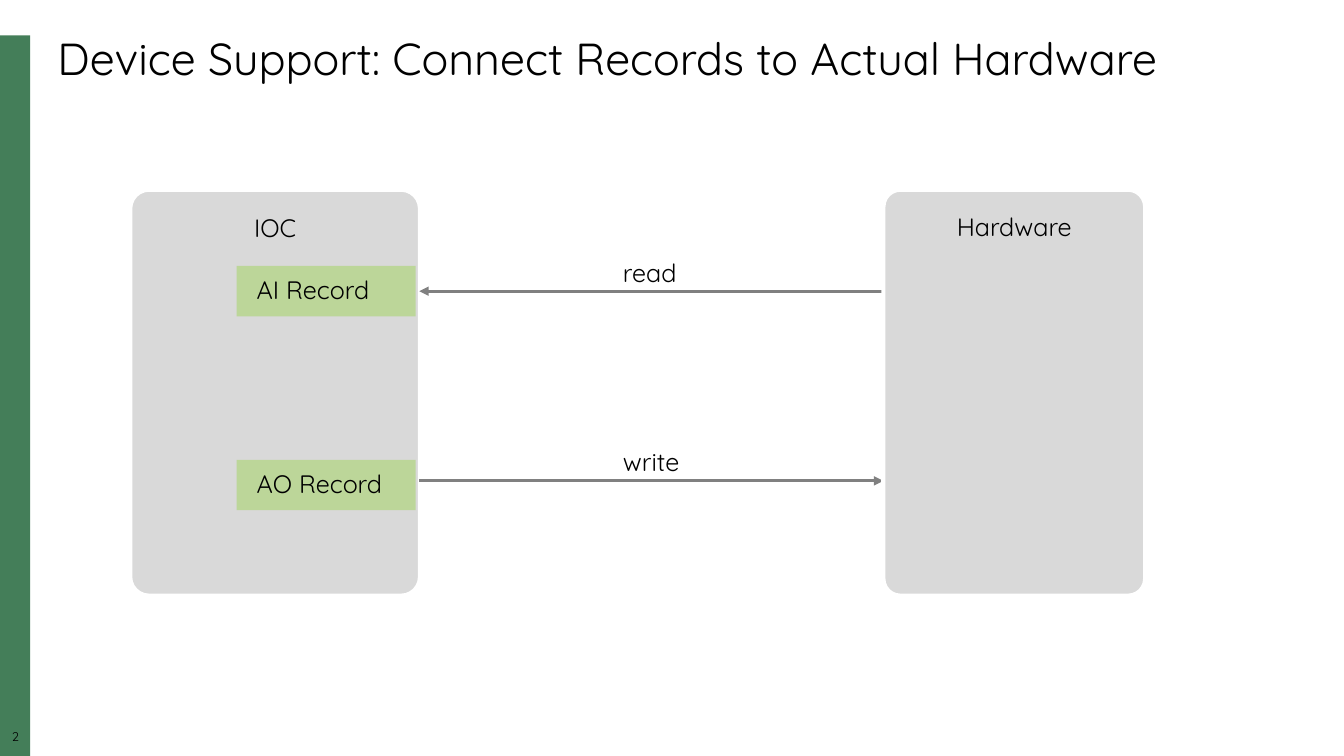
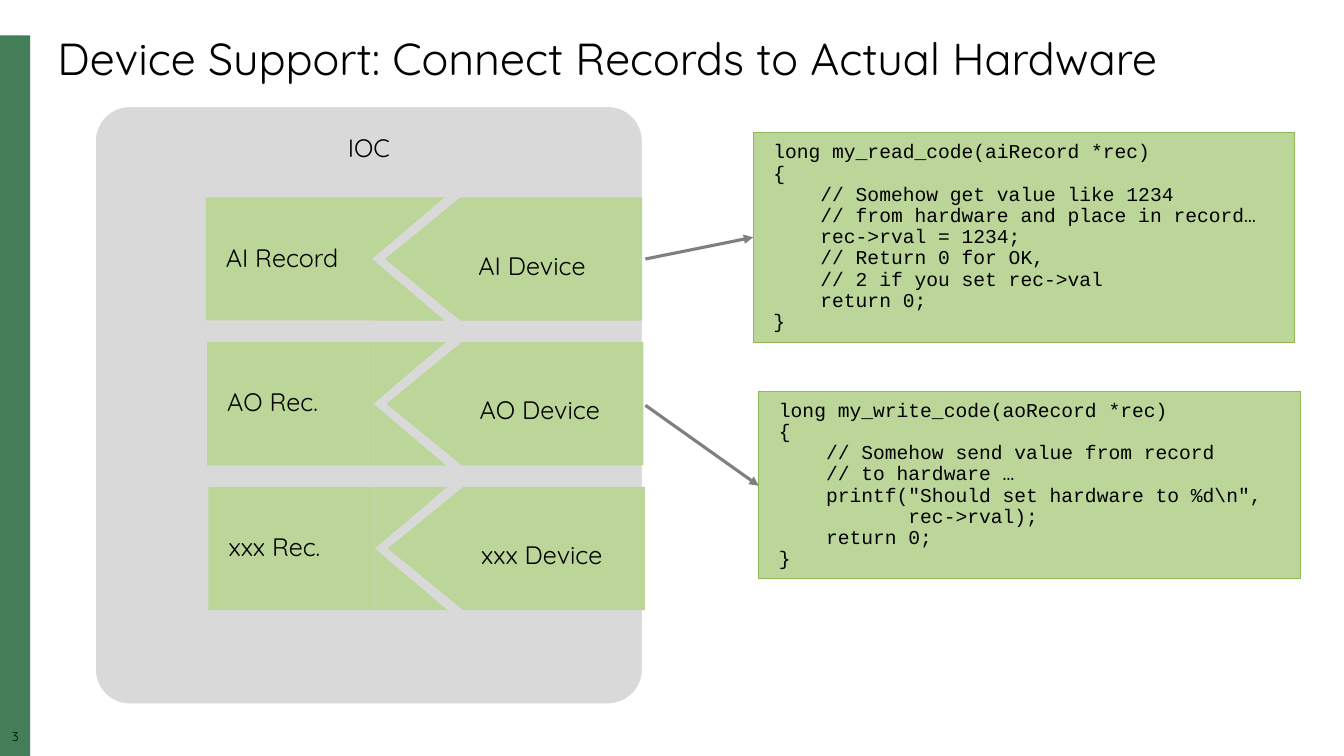
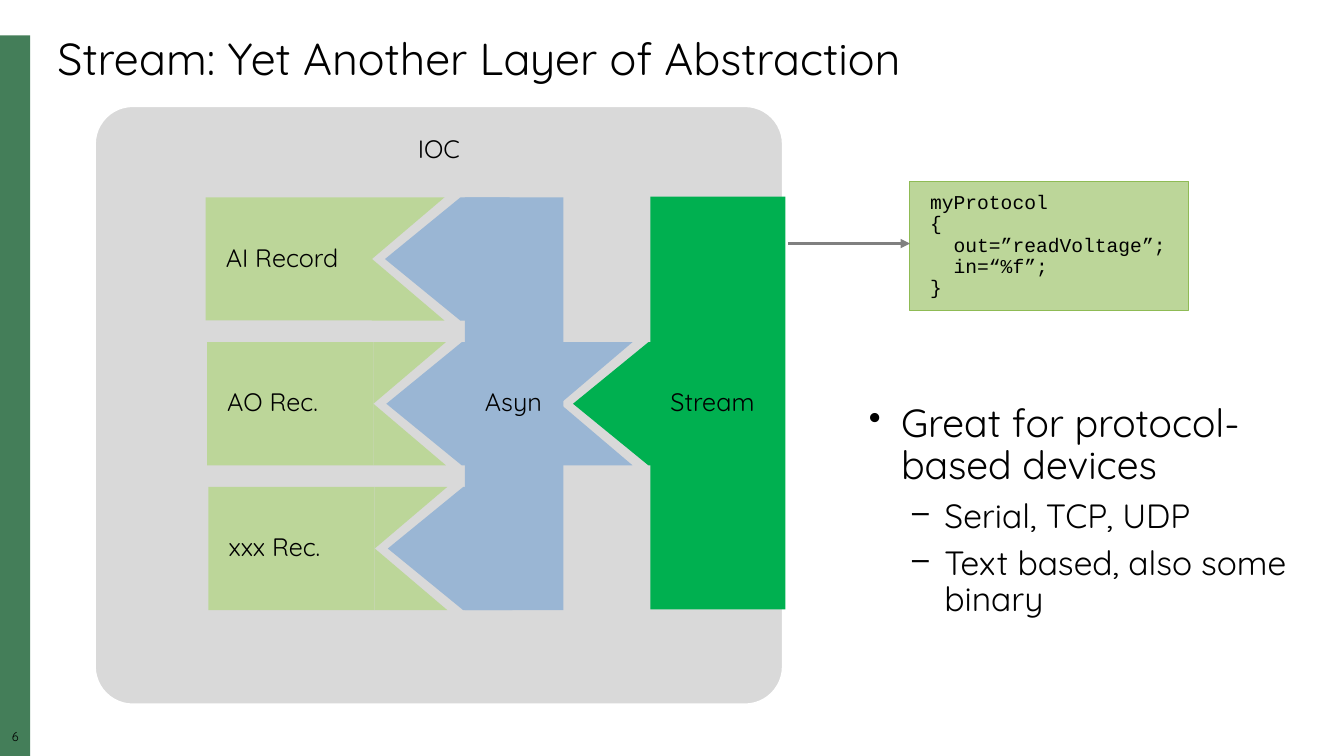
from lxml import etree
from pptx import Presentation
from pptx.dml.color import RGBColor
from pptx.enum.shapes import MSO_CONNECTOR, MSO_SHAPE
from pptx.enum.text import MSO_ANCHOR, PP_ALIGN
from pptx.oxml.ns import qn
from pptx.util import Pt

RECT = MSO_SHAPE.RECTANGLE
ROUND = MSO_SHAPE.ROUNDED_RECTANGLE
PLATE = MSO_SHAPE.PENTAGON
WEDGE = MSO_SHAPE.RIGHT_TRIANGLE
LINE = MSO_CONNECTOR.STRAIGHT
TOP, MIDDLE = MSO_ANCHOR.TOP, MSO_ANCHOR.MIDDLE
LEFT, CENTER = PP_ALIGN.LEFT, PP_ALIGN.CENTER

BLACK, WHITE = "000000", "FFFFFF"
BAND, PANEL, ARROW = "447E59", "D9D9D9", "808080"
LIME, EDGE, BLUE, GREEN = "BCD699", "8FBB55", "9AB6D4", "00B050"

BODY = {"name": "Quicksand", "size": Pt(18)}
HEAD = {**BODY, "size": Pt(32)}
SMALL = {**BODY, "size": Pt(9)}
CODE = {"name": "Courier New", "size": Pt(14)}
LEVELS = [
    {"mark": "•", "margin": 23, "size": 28},
    {"mark": "–", "margin": 54, "size": 24},
]

ROW_X, ROW_Y = 146.9, 141
STEP_X, STEP_Y = 1, 103.4
ROW_H, HALF = 88, 44
REC_W, NOTCH_W, GAP = 118.8, 51.8, 9.3
RECORDS = ["AI Record", "AO Rec.", "xxx Rec."]
DEVICES = ["AI Device", "AO Device", "xxx Device"]

READ = """long my_read_code(aiRecord *rec)
{
    // Somehow get value like 1234
    // from hardware and place in record…
    rec->rval = 1234;
    // Return 0 for OK,
    // 2 if you set rec->val
    return 0;
}"""
WRITE = r"""long my_write_code(aoRecord *rec)
{
    // Somehow send value from record
    // to hardware …
    printf("Should set hardware to %d\n",
           rec->rval);
    return 0;
}"""
STREAM = """myProtocol
{
  out=”readVoltage”;
  in=“%f”;
}"""


def color(code):
    return RGBColor.from_string(code)


def style(run, look):
    for key, value in look.items():
        setattr(run.font, key, value)
    run.font.color.rgb = color(BLACK)


def write(shape, text, look=BODY, align=LEFT, anchor=MIDDLE, inset=14.4):
    frame = shape.text_frame
    settings = {"word_wrap": True, "vertical_anchor": anchor}
    for side in ("left", "top", "right", "bottom"):
        settings["margin_" + side] = Pt(inset)
    for key, value in settings.items():
        setattr(frame, key, value)
    for i, line in enumerate(text.split("\n")):
        para = frame.paragraphs[0] if i == 0 else frame.add_paragraph()
        para.alignment, para.line_spacing = align, 0.9
        run = para.add_run()
        run.text = line
        style(run, look)


def label(slide, text, x, y, w, h, look=BODY, align=LEFT, inset=5):
    box = slide.shapes.add_textbox(Pt(x), Pt(y), Pt(w), Pt(h))
    write(box, text, look, align, TOP, inset)


def block(slide, kind, x, y, w, h, fill, edge=None, width=0.75):
    shape = slide.shapes.add_shape(kind, Pt(x), Pt(y), Pt(w), Pt(h))
    shape.shadow.inherit = False
    shape.fill.solid()
    shape.fill.fore_color.rgb = color(fill)
    if edge:
        shape.line.color.rgb = color(edge)
        shape.line.width = Pt(width)
    else:
        shape.line.fill.background()
    return shape


def panel(slide, text, x, y, w, h):
    shape = block(slide, ROUND, x, y, w, h, PANEL, WHITE, 3)
    shape.adjustments[0] = 0.065
    write(shape, text, align=CENTER, anchor=TOP)


def tile(slide, text, x, y, w, h, fill=LIME):
    write(block(slide, RECT, x, y, w, h, fill), text)


def code(slide, text, x, y, w, h):
    write(block(slide, RECT, x, y, w, h, LIME, EDGE), text, CODE)


def arrow(slide, x1, y1, x2, y2):
    line = slide.shapes.add_connector(LINE, Pt(x1), Pt(y1), Pt(x2), Pt(y2))
    line.line.color.rgb = color(ARROW)
    line.line.width = Pt(2.25)
    props = line.line._get_or_add_ln()
    etree.SubElement(props, qn("a:tailEnd"), type="triangle")
    etree.SubElement(line._element.spPr, qn("a:effectLst"))


def notch(slide, x, y, fill):
    block(slide, WEDGE, x, y + HALF, NOTCH_W, HALF, fill)
    shift = (NOTCH_W - HALF) / 2
    upper = block(slide, WEDGE, x + shift, y - shift, HALF, NOTCH_W, fill)
    upper.rotation = 90


def plate(slide, x, y, w, fill):
    shape = block(slide, PLATE, x, y, w, ROW_H, fill)
    shape.adjustments[0] = 0.612
    shape.rotation = 180


def rows(slide, width, fill, devices=()):
    for i, name in enumerate(RECORDS):
        x, y = ROW_X + i * STEP_X, ROW_Y + i * STEP_Y
        joint = x + REC_W
        plate(slide, joint + GAP, y, width, fill)
        notch(slide, joint, y, LIME)
        tile(slide, name, x, y, REC_W, ROW_H)
        if devices:
            label(slide, devices[i], joint + 71, y + 35, 112, 26)


def bullets(slide, items, x, y, w, h):
    box = slide.shapes.add_textbox(Pt(x), Pt(y), Pt(w), Pt(h))
    frame = box.text_frame
    frame.word_wrap = True
    for i, (depth, text) in enumerate(items):
        level = LEVELS[depth]
        para = frame.paragraphs[0] if i == 0 else frame.add_paragraph()
        para.level, para.line_spacing = depth, 0.9
        para.space_before = Pt(8 if i else 0)
        props = para._p.get_or_add_pPr()
        props.set("marL", str(Pt(level["margin"])))
        props.set("indent", str(-Pt(23)))
        tint = etree.SubElement(props, qn("a:buClr"))
        etree.SubElement(tint, qn("a:srgbClr"), val=BLACK)
        etree.SubElement(props, qn("a:buSzPct"), val="90000")
        etree.SubElement(props, qn("a:buChar"), char=level["mark"])
        run = para.add_run()
        run.text = text
        style(run, {**BODY, "size": Pt(level["size"])})


def page(deck, title, number):
    slide = deck.slides.add_slide(deck.slide_layouts[6])
    block(slide, RECT, 0, 25.2, 21.6, 514.8, BAND)
    label(slide, number, 0, 522, 22, 12, SMALL, CENTER, 0)
    label(slide, title, 36, 21.6, 900, 42.5, HEAD)
    return slide


def direct(deck, title):
    slide = page(deck, title, "2")
    panel(slide, "IOC", 93, 135.5, 207, 290)
    arrow(slide, 648, 208, 299.5, 208)
    arrow(slide, 299.5, 343.5, 631, 343.5)
    for text, y in (("read", 181), ("write", 316.5)):
        label(slide, text, 440, y, 60, 26)
    for text, y in (("AI Record", 190), ("AO Record", 328.5)):
        tile(slide, text, 169, y, 128, 36)
    panel(slide, "Hardware", 631, 135.5, 187, 290)


def device(deck, title):
    slide = page(deck, title, "3")
    panel(slide, "IOC", 67, 75, 393, 429)
    rows(slide, 183.6, LIME, DEVICES)
    code(slide, READ, 538, 94.5, 387, 150)
    code(slide, WRITE, 542, 279.5, 387, 134)
    arrow(slide, 461, 185, 538, 169.5)
    arrow(slide, 461, 289.5, 542, 347)


def stream(deck, title):
    slide = page(deck, title, "6")
    panel(slide, "IOC", 67, 75, 493, 429)
    rows(slide, 89, BLUE)
    tall, middle = 2 * STEP_Y + ROW_H, ROW_Y + STEP_Y
    notch(slide, 400, middle, BLUE)
    tile(slide, "Asyn", 332, ROW_Y, 70.5, tall, BLUE)
    plate(slide, 400 + GAP, middle, 89, GREEN)
    tile(slide, "Stream", 464.5, ROW_Y - 0.5, 96.5, tall, GREEN)
    code(slide, STREAM, 650, 129.5, 199, 92)
    arrow(slide, 563, 174, 650, 174)
    items = [
        (0, "Great for protocol-based devices"),
        (1, "Serial, TCP, UDP"),
        (1, "Text based, also some binary"),
    ]
    bullets(slide, items, 613.5, 284.5, 320.5, 185)


def main():
    deck = Presentation()
    deck.slide_width, deck.slide_height = Pt(960), Pt(540)
    title = "Device Support: Connect Records to Actual Hardware"
    direct(deck, title)
    device(deck, title)
    stream(deck, "Stream: Yet Another Layer of Abstraction")
    deck.save("out.pptx")


if __name__ == "__main__":
    main()
